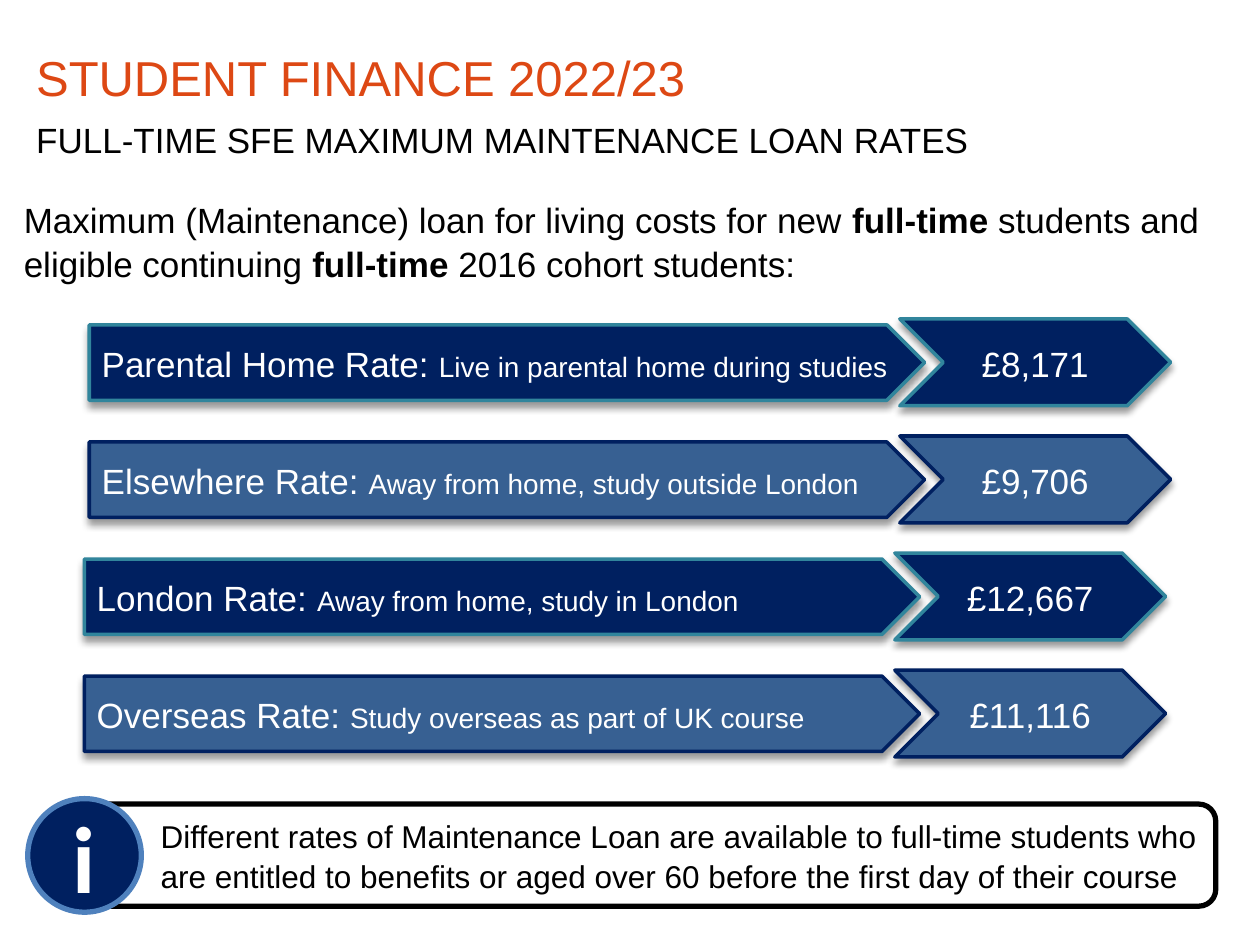
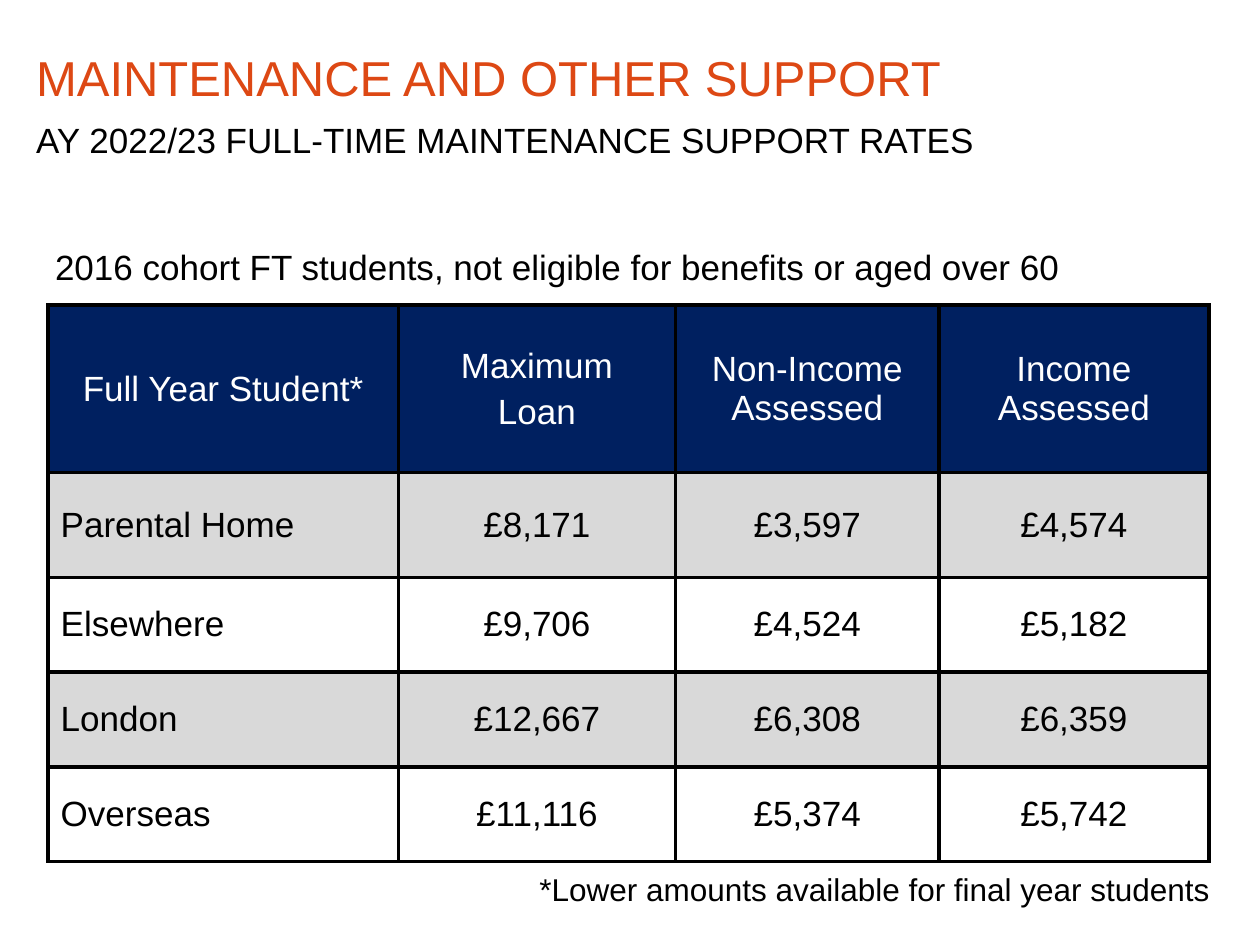
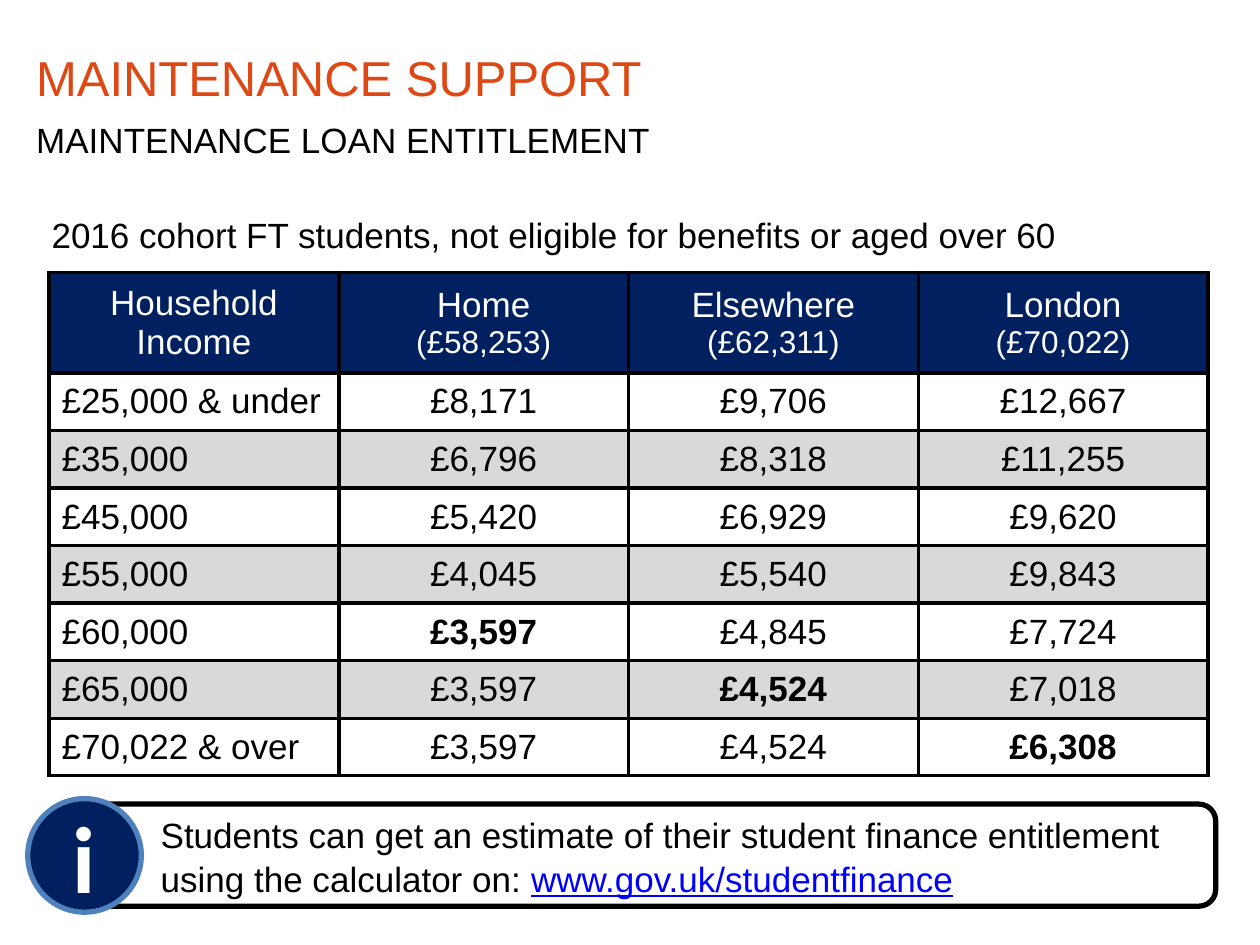
from lxml import etree
from pptx import Presentation
from pptx.dml.color import RGBColor
from pptx.enum.shapes import MSO_SHAPE
from pptx.enum.text import MSO_ANCHOR, PP_ALIGN
from pptx.oxml import parse_xml
from pptx.oxml.ns import nsdecls, qn
from pptx.util import Cm, Pt

LEFT, CENTER, RIGHT = PP_ALIGN.LEFT, PP_ALIGN.CENTER, PP_ALIGN.RIGHT
TOP, MIDDLE = MSO_ANCHOR.TOP, MSO_ANCHOR.MIDDLE
PLATE, CHEVRON = MSO_SHAPE.PENTAGON, MSO_SHAPE.CHEVRON
PANEL, CIRCLE = MSO_SHAPE.ROUNDED_RECTANGLE, MSO_SHAPE.OVAL

ORANGE, NAVY, STEEL, TEAL = "DD4814", "002060", "376092", "31859C"
BLACK, WHITE, GREY, RING, LINK = "000000", "FFFFFF", "D9D9D9", "4F81BD", "0000FF"
BOLD = {"bold": True}


def color(target, value):
    """Give a fill one solid colour, or a font its colour."""
    if hasattr(target, "solid"):
        target.solid()
        target.fore_color.rgb = RGBColor.from_string(value)
    else:
        target.color.rgb = RGBColor.from_string(value)


def write(holder, paragraphs, size=20, ink=BLACK, font="Arial", bold=False, align=LEFT,
          anchor=TOP, gap=0, spacing=1.05, insets=None, fill=None, line=None, line_width=2):
    """Fill a shape or table cell; a paragraph is a string or a list of (text, changes)."""
    frame = holder.text_frame
    frame.word_wrap = True
    holder_with_anchor = holder if hasattr(holder, "vertical_anchor") else frame
    holder_with_anchor.vertical_anchor = anchor
    if insets:
        frame.margin_left, frame.margin_top, frame.margin_right, frame.margin_bottom = map(Cm, insets)
    if fill:
        color(holder.fill, fill)
    if line:
        holder.shadow.inherit = False
        color(holder.line.fill, line)
        holder.line.width = Pt(line_width)
    for number, content in enumerate(paragraphs):
        paragraph = frame.add_paragraph() if number else frame.paragraphs[0]
        paragraph.alignment = align
        paragraph.line_spacing = spacing
        if number and gap:
            paragraph.space_before = Pt(gap)
        for text, changes in [(content, {})] if isinstance(content, str) else content:
            run = paragraph.add_run()
            run.text = text
            run.font.name = font
            run.font.size = Pt(changes.get("size", size))
            run.font.bold = changes.get("bold", bold)
            if changes.get("underline"):
                run.font.underline = True
            color(run.font, changes.get("ink", ink))


presentation = Presentation()
presentation.slide_width, presentation.slide_height = Cm(25.4), Cm(19.05)

# Content shared by every slide: title, subtitle and optional information note
headings = [
    ("STUDENT FINANCE 2022/23", "FULL-TIME SFE MAXIMUM MAINTENANCE LOAN RATES"),
    ("MAINTENANCE AND OTHER SUPPORT", "AY 2022/23 FULL-TIME MAINTENANCE SUPPORT RATES"),
    ("MAINTENANCE SUPPORT", "MAINTENANCE LOAN ENTITLEMENT"),
]
notes = [
    (18, ["Different rates of Maintenance Loan are available to full-time students who",
          "are entitled to benefits or aged over 60 before the first day of their course"]),
    None,
    (20, ["Students can get an estimate of their student finance entitlement",
          [("using the calculator on: ", {}),
           ("www.gov.uk/studentfinance", {"ink": LINK, "underline": True})]]),
]
slides = []
for (title, subtitle), note in zip(headings, notes):
    slide = presentation.slides.add_slide(presentation.slide_layouts[6])
    slides.append(slide)
    title_box = slide.shapes.add_textbox(Cm(0.73), Cm(0.89), Cm(22.1), Cm(2.26))
    write(title_box, [[(title, {"size": 28, "ink": ORANGE})], subtitle], gap=6, insets=(0, 0, 0, 0))
    if note:
        note_size, note_lines = note
        panel = slide.shapes.add_shape(PANEL, Cm(1.14), Cm(16.21), Cm(23.37), Cm(2.06))
        write(panel, note_lines, size=note_size, anchor=MIDDLE, insets=(2, 0, 0, 0),
              fill=WHITE, line=BLACK, line_width=3)
        badge = slide.shapes.add_shape(CIRCLE, Cm(0.56), Cm(16.1), Cm(2.29), Cm(2.29))
        write(badge, ["i"], size=54, font="Calibri", ink=WHITE, bold=True, align=CENTER,
              anchor=MIDDLE, spacing=1, insets=(0, 0, 0, 0), fill=NAVY, line=RING, line_width=3)

# Slide 1: introduction and one pair of arrows per loan rate
intro = slides[0].shapes.add_textbox(Cm(0.23), Cm(3.83), Cm(24.92), Cm(2))
write(intro, [
    [("Maximum (Maintenance) loan for living costs for new ", {}), ("full-time", BOLD),
     (" students and", {})],
    [("eligible continuing ", {}), ("full-time", BOLD), (" 2016 cohort students:", {})],
])
rates = [
    ("Parental Home Rate: ", "Live in parental home during studies", "£8,171"),
    ("Elsewhere Rate: ", "Away from home, study outside London", "£9,706"),
    ("London Rate: ", "Away from home, study in London", "£12,667"),
    ("Overseas Rate: ", "Study overseas as part of UK course", "£11,116"),
]
for number, (rate, condition, amount) in enumerate(rates):
    left = 1.8 if number < 2 else 1.7
    top = 6.55 + 2.36 * number
    fill, line = (STEEL, NAVY) if number % 2 else (NAVY, TEAL)
    plate = slides[0].shapes.add_shape(PLATE, Cm(left), Cm(top), Cm(16.84), Cm(1.52))
    write(plate, [[(rate, {}), (condition, {"size": 16})]], ink=WHITE, anchor=MIDDLE,
          insets=(0.25, 0.13, 0, 0.13), fill=fill, line=line)
    chevron = slides[0].shapes.add_shape(
        CHEVRON, Cm(left + 16.34), Cm(top - 0.12), Cm(5.46), Cm(1.75))
    write(chevron, [amount], ink=WHITE, align=CENTER, anchor=MIDDLE, fill=fill, line=line)
    for shape in (plate, chevron):
        effects = shape._element.spPr.find(qn("a:effectLst"))
        effects.append(parse_xml(
            f'<a:outerShdw {nsdecls("a")} blurRad="50800" dist="38100" dir="5400000" rotWithShape="0">'
            f'<a:srgbClr val="{BLACK}"><a:alpha val="40000"/></a:srgbClr></a:outerShdw>'))

# Slides 2 and 3: caption and table of amounts
support_rows = [
    [["Full Year Student*"], ["Maximum", "Loan"], ["Non-Income Assessed"], ["Income Assessed"]],
    ["Parental Home", "£8,171", "£3,597", "£4,574"],
    ["Elsewhere", "£9,706", "£4,524", "£5,182"],
    ["London", "£12,667", "£6,308", "£6,359"],
    ["Overseas", "£11,116", "£5,374", "£5,742"],
]
small = {"size": 18}
entitlement_rows = [
    [["Household Income"], ["Home", [("(£58,253)", small)]],
     ["Elsewhere", [("(£62,311)", small)]], ["London", [("(£70,022)", small)]]],
    ["£25,000 & under", "£8,171", "£9,706", "£12,667"],
    ["£35,000", "£6,796", "£8,318", "£11,255"],
    ["£45,000", "£5,420", "£6,929", "£9,620"],
    ["£55,000", "£4,045", "£5,540", "£9,843"],
    ["£60,000", [("£3,597", BOLD)], "£4,845", "£7,724"],
    ["£65,000", "£3,597", [("£4,524", BOLD)], "£7,018"],
    ["£70,022 & over", "£3,597", "£4,524", [("£6,308", BOLD)]],
]
# slide, caption place, table place, column widths, row heights, grey row parity, header gap, rows
tables = [
    (slides[1], (0.86, 4.78), (0.97, 6.15), [7.06, 5.59, 5.31, 5.44],
     [3.38, 2.11] + [1.91] * 3, 1, 4, support_rows),
    (slides[2], (0.79, 4.14), (0.99, 5.49), [5.84] * 4,
     [2.03] + [1.16] * 7, 0, 0, entitlement_rows),
]
for slide, caption_place, table_place, widths, heights, grey_parity, header_gap, rows in tables:
    caption = slide.shapes.add_textbox(*map(Cm, caption_place), Cm(21.6), Cm(1.12))
    write(caption, ["2016 cohort FT students, not eligible for benefits or aged over 60"])
    table = slide.shapes.add_table(len(rows), len(widths), *map(Cm, table_place),
                                   Cm(sum(widths)), Cm(sum(heights))).table
    table.first_row = table.horz_banding = False
    for column, width in zip(table.columns, widths):
        column.width = Cm(width)
    for row, height in zip(table.rows, heights):
        row.height = Cm(height)
    for row_number, values in enumerate(rows):
        for column_number, value in enumerate(values):
            cell = table.cell(row_number, column_number)
            if row_number == 0:
                write(cell, value, ink=WHITE, align=CENTER, anchor=MIDDLE, gap=header_gap,
                      spacing=1, fill=NAVY)
            else:
                write(cell, [value], align=CENTER if column_number else LEFT, anchor=MIDDLE,
                      spacing=1, fill=GREY if row_number % 2 == grey_parity else WHITE)
            properties = cell._tc.get_or_add_tcPr()
            for position, side in enumerate(("lnL", "lnR", "lnT", "lnB")):
                border = etree.Element(qn(f"a:{side}"), w=str(Pt(2.25)))
                border_fill = etree.SubElement(border, qn("a:solidFill"))
                etree.SubElement(border_fill, qn("a:srgbClr"), val=BLACK)
                properties.insert(position, border)

# Slide 2: footnote under the table
footnote = slides[1].shapes.add_textbox(Cm(9.64), Cm(17.37), Cm(15), Cm(1.02))
write(footnote, ["*Lower amounts available for final year students"], size=18, align=RIGHT)

presentation.save("out.pptx")
